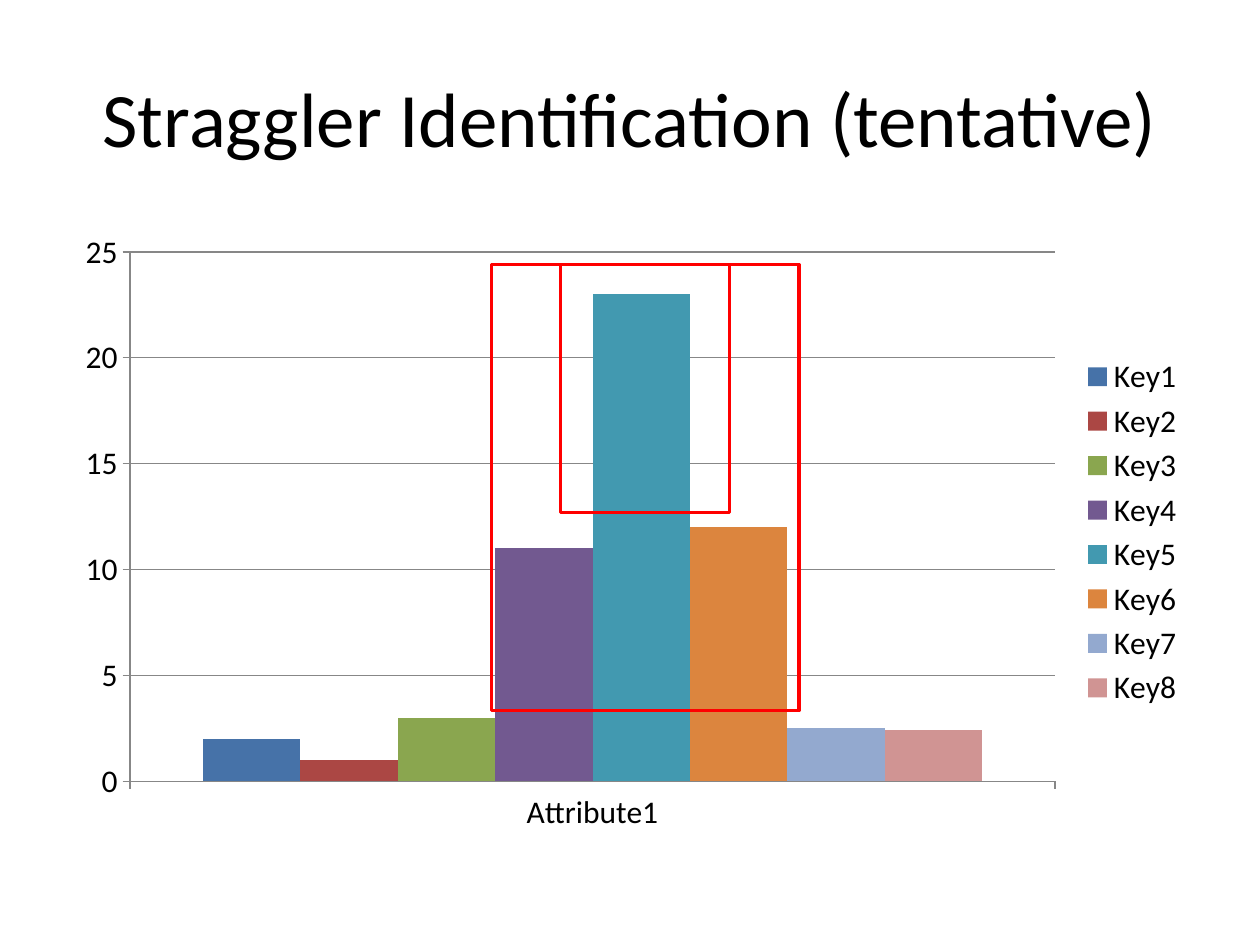
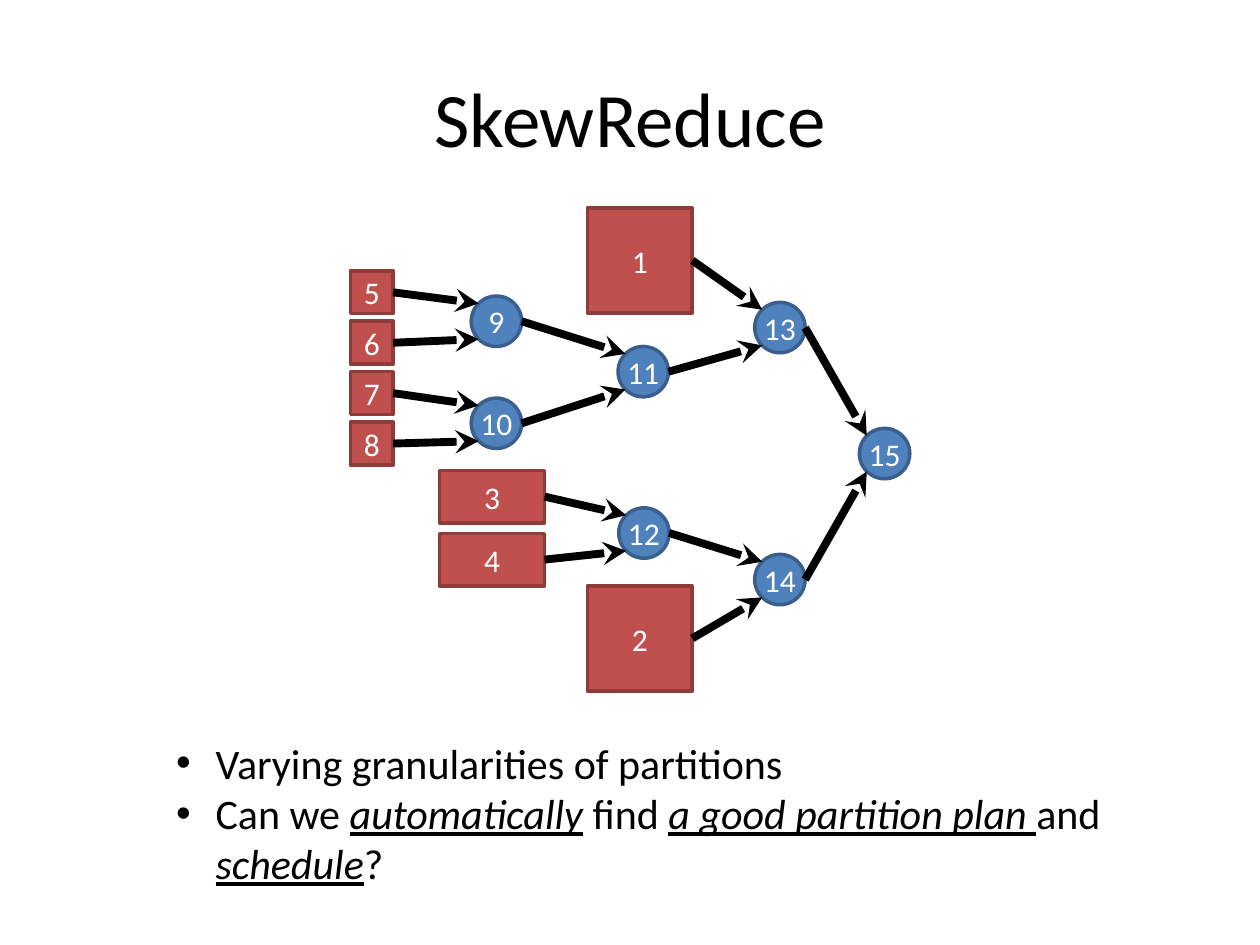
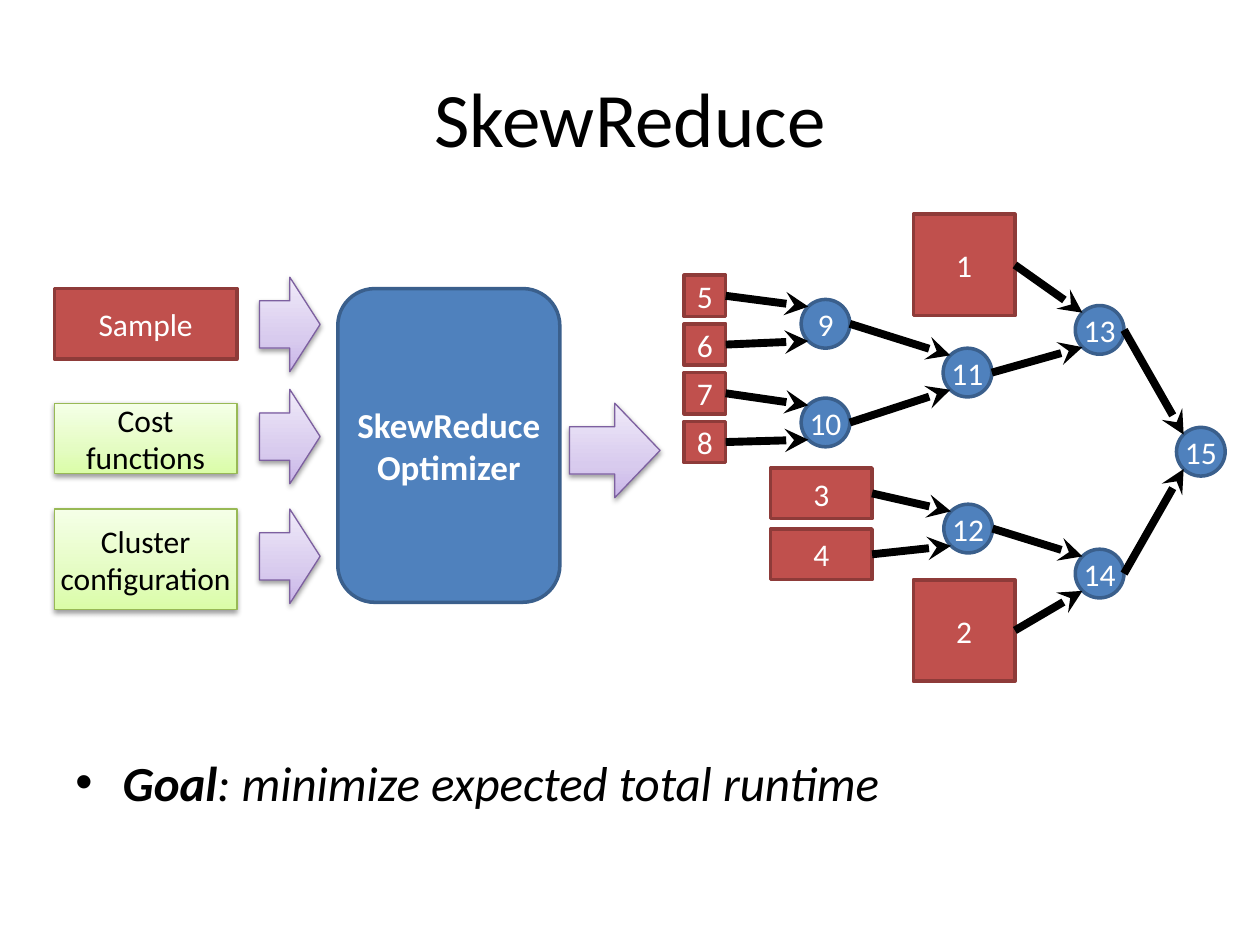
import copy

import pptx
import pptx.chart.data
import pptx.dml.color
import pptx.enum.chart
import pptx.enum.shapes
import pptx.enum.text
import pptx.oxml
import pptx.oxml.ns
import pptx.util

Pt = pptx.util.Pt
SHAPE = pptx.enum.shapes.MSO_SHAPE
ALIGN = pptx.enum.text.PP_ALIGN
MIDDLE = pptx.enum.text.MSO_ANCHOR.MIDDLE
NSDECLS = pptx.oxml.ns.nsdecls("a")

FONT = "Calibri"
BLACK, WHITE, RED, GRAY = "000000", "FFFFFF", "FF0000", "878787"

# Looks: fill (one colour, gradient stops from bottom to top, or None), line, width
PARTITION = {"fill": "C0504D", "line": "8E3B39", "width": 2}
MERGE = {"fill": "4F81BD", "line": "3A5F8C", "width": 2}
HIGHLIGHT = {"fill": None, "line": RED, "width": 2}
INPUT = {"fill": ("DAFDA7", "E4FCC2", "F5FFE7"), "line": "98B955", "width": 0.75}
FLOW = {"fill": ("C9B5E8", "D8CBEE", "F0EAF9"), "line": "7D60A0", "width": 0.75}
STOPS = (0, 0.35, 1)

SERIES = [
    ("Key1", 2, "4672A8"), ("Key2", 1, "AB4744"),
    ("Key3", 3, "8AA64F"), ("Key4", 11, "725990"),
    ("Key5", 23, "4299B0"), ("Key6", 12, "DC853E"),
    ("Key7", 2.5, "93A9CF"), ("Key8", 2.4, "D09493"),
]

# Plan tree, in points from its top left corner: left, top, width, height
PARTITIONS = {
    "1": (135.4, 0, 60, 60),
    "2": (135.4, 216, 60, 60),
    "3": (51, 150, 60, 30),
    "4": (51, 186, 60, 30),
    **{str(5 + i): (0, 36 + 28.8 * i, 24.5, 24.5) for i in range(4)},
}
MERGE_SIZE = 28.8
MERGES = {
    "9": (69.1, 50.4), "10": (69.1, 108.7), "11": (153, 79.2),
    "12": (153.4, 171.4), "13": (231.1, 54), "14": (231.1, 198),
    "15": (290.9, 126),
}
MERGE_INPUTS = {
    "9": "56", "10": "78", "11": ("9", "10"), "12": "34",
    "13": ("1", "11"), "14": ("12", "2"), "15": ("13", "14"),
}


def rgb(value):
    return pptx.dml.color.RGBColor.from_string(value)


def set_all(obj, values):
    for name, value in values.items():
        setattr(obj, name, value)


def box(*lengths):
    return [Pt(n) for n in lengths]


def style_font(font, color, **values):
    set_all(font, {"name": FONT, **values})
    font.color.rgb = rgb(color)


def write(tf, paragraphs, size, color, **values):
    """Fill a frame; each paragraph is a list of (text, font values)."""
    for i, runs in enumerate(paragraphs):
        p = tf.paragraphs[0] if i == 0 else tf.add_paragraph()
        set_all(p, values)
        for text, look in runs:
            r = p.add_run()
            r.text = text
            style_font(r.font, color, size=Pt(size), **look)


def set_insets(tf, inset):
    set_all(tf, {f"margin_{side}": Pt(inset)
                 for side in ("left", "right", "top", "bottom")})


def add_titled_slide(prs, title):
    slide = prs.slides.add_slide(prs.slide_layouts[5])
    sp = slide.shapes.title
    set_all(sp, dict(zip(("left", "top", "width", "height"), box(36, 21.6, 648, 90))))
    sp.text_frame.vertical_anchor = MIDDLE
    write(sp.text_frame, [[(title, {})]], 44, BLACK, alignment=ALIGN.CENTER)
    return slide


def fill_gradient(fill, colors):
    fill.gradient()
    fill.gradient_angle = 90
    last = fill.gradient_stops[1]._gs
    last.addprevious(copy.deepcopy(last))
    for stop, position, color in zip(fill.gradient_stops, STOPS, colors):
        stop.position = position
        stop.color.rgb = rgb(color)


def add_soft_shadow(sp):
    sp._element.spPr.find(pptx.oxml.ns.qn("a:effectLst")).append(pptx.oxml.parse_xml(
        f'<a:outerShdw {NSDECLS} blurRad="{Pt(3.1)}" dist="{Pt(1.6)}" dir="5400000" '
        'rotWithShape="0"><a:srgbClr val="000000"><a:alpha val="38000"/>'
        '</a:srgbClr></a:outerShdw>'))


def add_figure(shapes, kind, at, look, lines=(), size=18, color=WHITE,
               inset=0, wrap=True, bold=False):
    sp = shapes.add_shape(kind, *box(*at))
    sp.shadow.inherit = False
    sp.line.color.rgb = rgb(look["line"])
    sp.line.width = Pt(look["width"])
    if look["fill"] is None:
        sp.fill.background()
    elif isinstance(look["fill"], str):
        sp.fill.solid()
        sp.fill.fore_color.rgb = rgb(look["fill"])
    else:
        fill_gradient(sp.fill, look["fill"])
        add_soft_shadow(sp)
    tf = sp.text_frame
    set_all(tf, {"word_wrap": wrap, "vertical_anchor": MIDDLE})
    set_insets(tf, inset)
    write(tf, [[(line, {"bold": bold})] for line in lines], size, color,
          alignment=ALIGN.CENTER)


def add_arrow(shapes, start, end):
    cxn = shapes.add_connector(pptx.enum.shapes.MSO_CONNECTOR.STRAIGHT, *box(*start, *end))
    cxn.line.width = Pt(4.5)
    cxn.line.color.rgb = rgb(BLACK)
    cxn.line._get_or_add_ln().append(
        pptx.oxml.parse_xml(f'<a:tailEnd {NSDECLS} type="stealth"/>'))
    cxn._element.spPr.append(pptx.oxml.parse_xml(f"<a:effectLst {NSDECLS}/>"))


def add_plan_tree(slide, left, top, scale=1):
    """Partitions feeding merge steps, drawn as one group."""
    shapes = slide.shapes.add_group_shape().shapes
    nodes = {**PARTITIONS,
             **{name: (*at, MERGE_SIZE, MERGE_SIZE) for name, at in MERGES.items()}}
    places = {name: (left + scale * x, top + scale * y, scale * w, scale * h)
              for name, (x, y, w, h) in nodes.items()}
    for name, at in places.items():
        kind, look = ((SHAPE.OVAL, MERGE) if name in MERGES
                      else (SHAPE.RECTANGLE, PARTITION))
        add_figure(shapes, kind, at, look, [name], wrap=False)
    for target, sources in MERGE_INPUTS.items():
        x, y, size, _ = places[target]
        corner = size * (1 - 0.5 ** 0.5) / 2
        for source in sources:
            sx, sy, sw, sh = places[source]
            middle = sy + sh / 2
            above = middle < y + size / 2
            add_arrow(shapes, (sx + sw, middle),
                      (x + corner, y + (corner if above else size - corner)))


def add_bullets(slide, at, paragraphs, size, indent, before=0):
    tf = slide.shapes.add_textbox(*box(*at)).text_frame
    tf.word_wrap = True
    write(tf, paragraphs, size, BLACK, space_before=Pt(before))
    for p in tf.paragraphs:
        pPr = p._p.get_or_add_pPr()
        pPr.set("marL", str(Pt(indent)))
        pPr.set("indent", str(-Pt(indent)))
        for xml in (f'<a:buFont {NSDECLS} typeface="Arial"/>',
                    f'<a:buChar {NSDECLS} char="•"/>'):
            pPr.append(pptx.oxml.parse_xml(xml))


def add_key_chart(slide, at):
    data = pptx.chart.data.CategoryChartData()
    data.categories = ["Attribute1"]
    for name, value, _ in SERIES:
        data.add_series(name, [value])
    chart = slide.shapes.add_chart(
        pptx.enum.chart.XL_CHART_TYPE.COLUMN_CLUSTERED, *box(*at), data).chart
    style_font(chart.font, BLACK, size=Pt(18))
    chart.has_title = False
    chart.has_legend = True
    set_all(chart.legend, {"position": pptx.enum.chart.XL_LEGEND_POSITION.RIGHT,
                           "include_in_layout": False})
    set_all(chart.plots[0], {"gap_width": 150, "overlap": 0, "vary_by_categories": False})
    for series, (_, _, color) in zip(chart.plots[0].series, SERIES):
        series.format.fill.solid()
        series.format.fill.fore_color.rgb = rgb(color)
    axis = chart.value_axis
    set_all(axis, {"minimum_scale": 0, "maximum_scale": 25, "major_unit": 5,
                   "has_major_gridlines": True})
    for part in (axis, axis.major_gridlines, chart.category_axis):
        part.format.line.color.rgb = rgb(GRAY)
        part.format.line.width = Pt(0.75)


def add_straggler_slide(prs):
    slide = add_titled_slide(prs, "Straggler Identification (tentative)")
    add_key_chart(slide, (36, 126, 648, 356.4))
    for at in ((320.4, 151.2, 96.5, 141.8), (280.8, 151.2, 175.7, 254.9)):
        add_figure(slide.shapes, SHAPE.RECTANGLE, at, HIGHLIGHT)


def add_plan_slide(prs):
    slide = add_titled_slide(prs, "SkewReduce")
    add_plan_tree(slide, 200.2, 118.8)
    stress = {"italic": True, "underline": True}
    add_bullets(slide, (93.6, 417.6, 584, 94.3), [
        [("Varying granularities of partitions", {})],
        [("Can we ", {}), ("automatically", stress), (" find ", {}),
         ("a good partition plan ", stress), ("and ", {}),
         ("schedule", stress), ("?", {})],
    ], 24, 22.5)


def add_optimizer_slide(prs):
    slide = add_titled_slide(prs, "SkewReduce")
    shapes = slide.shapes
    add_bullets(slide, (36, 426.2, 648, 59), [
        [("Goal", {"bold": True, "italic": True}),
         (": minimize expected total runtime", {"italic": True})],
    ], 28, 27, before=5.6)
    add_plan_tree(slide, 391, 122.4, 0.967)
    add_figure(shapes, SHAPE.ROUNDED_RECTANGLE, (193, 164.9, 126.9, 179.3), MERGE,
               ["SkewReduce", "Optimizer"], size=20, bold=True)
    for top, height, look, color, inset, lines in (
            (164.9, 40.3, PARTITION, WHITE, 0, ["Sample"]),
            (230.4, 40.3, INPUT, BLACK, 6, ["Cost functions"]),
            (290.9, 57.6, INPUT, BLACK, 0, ["Cluster", "configuration"])):
        add_figure(shapes, SHAPE.RECTANGLE, (31, top, 104.4, height), look, lines,
                   color=color, inset=inset)
    for left, top, width in ((148.3, 158.4, 34.6), (148.3, 222.5, 34.6),
                             (148.3, 290.9, 34.6), (325.4, 230.4, 51.8)):
        add_figure(shapes, SHAPE.RIGHT_ARROW, (left, top, width, 54), FLOW)


def main():
    prs = pptx.Presentation()
    prs.slide_width, prs.slide_height = box(720, 540)
    add_straggler_slide(prs)
    add_plan_slide(prs)
    add_optimizer_slide(prs)
    prs.save("out.pptx")


if __name__ == "__main__":
    main()
